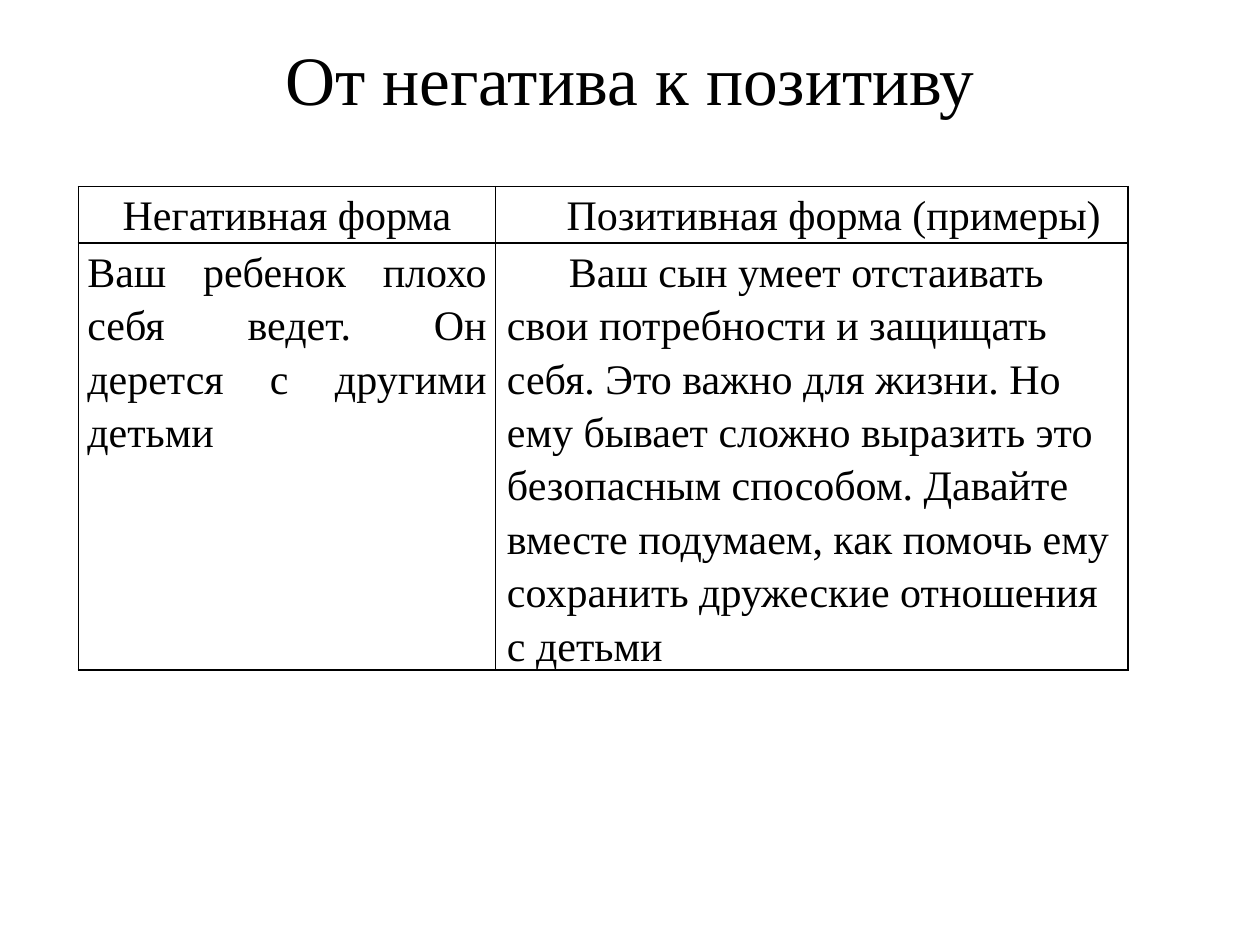
from dataclasses import dataclass

from lxml import etree
from pptx import Presentation
from pptx.dml.color import RGBColor
from pptx.enum.text import MSO_ANCHOR, PP_ALIGN
from pptx.oxml.ns import qn
from pptx.util import Cm, Pt

LEFT, CENTER, JUSTIFY = PP_ALIGN.LEFT, PP_ALIGN.CENTER, PP_ALIGN.JUSTIFY
MIDDLE = MSO_ANCHOR.MIDDLE
TITLE_ONLY = 5
FONT = "Times New Roman"
BLACK = "000000"
COLUMN_WIDTHS = (Cm(8.41), Cm(12.75))
ROW_HEIGHTS = (Cm(1.14), Cm(6.88))


@dataclass
class Phrase:
    text: str
    align: PP_ALIGN = LEFT
    margin: float = 0
    first_line: float = 0


PHRASES = (
    (
        Phrase("Негативная форма", CENTER),
        Phrase("Позитивная форма\u00a0(примеры)", first_line=1.25),
    ),
    (
        Phrase("Ваш ребенок плохо себя ведет. Он дерется с другими детьми", JUSTIFY),
        Phrase(
            "Ваш сын умеет отстаивать свои потребности и защищать себя. "
            "Это важно для жизни. Но ему бывает сложно выразить это безопасным "
            "способом. Давайте вместе подумаем, как помочь ему сохранить "
            "дружеские отношения с детьми",
            margin=0.05,
            first_line=1.25,
        ),
    ),
)


def color(value: str) -> RGBColor:
    return RGBColor.from_string(value)


def add_text(paragraph, text: str, size: float, align: PP_ALIGN) -> None:
    paragraph.alignment = align
    run = paragraph.add_run()
    run.text = text
    run.font.name = FONT
    run.font.size = Pt(size)
    run.font.color.rgb = color(BLACK)


def add_borders(cell) -> None:
    properties = cell._tc.get_or_add_tcPr()
    for position, side in enumerate(("a:lnL", "a:lnR", "a:lnT", "a:lnB")):
        line = etree.Element(qn(side), w=str(Pt(1)))
        fill = etree.SubElement(line, qn("a:solidFill"))
        etree.SubElement(fill, qn("a:srgbClr"), val=BLACK)
        properties.insert(position, line)


def fill_cell(cell, phrase: Phrase) -> None:
    cell.margin_left = cell.margin_right = Cm(0.18)
    cell.margin_top = cell.margin_bottom = 0
    cell.fill.background()
    add_borders(cell)
    paragraph = cell.text_frame.paragraphs[0]
    paragraph.line_spacing = 1.15
    add_text(paragraph, phrase.text, 24, phrase.align)
    properties = paragraph._p.get_or_add_pPr()
    properties.set("marL", str(Cm(phrase.margin)))
    properties.set("indent", str(Cm(phrase.first_line)))


def main() -> None:
    prs = Presentation()
    prs.slide_width, prs.slide_height = Cm(25.4), Cm(19.05)
    slide = prs.slides.add_slide(prs.slide_layouts[TITLE_ONLY])

    # Title
    title = slide.shapes.title
    title.left, title.top = Cm(1.27), Cm(0.76)
    title.width, title.height = Cm(22.86), Cm(1.63)
    title.text_frame.vertical_anchor = MIDDLE
    add_text(title.text_frame.paragraphs[0], "От негатива к позитиву", 39.6, CENTER)

    # Negative and positive wording side by side
    frame = slide.shapes.add_table(
        len(ROW_HEIGHTS), len(COLUMN_WIDTHS), Cm(1.58), Cm(3.76),
        sum(COLUMN_WIDTHS), sum(ROW_HEIGHTS),
    )
    wording = frame.table
    for column, width in zip(wording.columns, COLUMN_WIDTHS):
        column.width = width
    for row, height, phrases in zip(wording.rows, ROW_HEIGHTS, PHRASES):
        row.height = height
        for cell, phrase in zip(row.cells, phrases):
            fill_cell(cell, phrase)
    frame.height = Cm(10.52)

    prs.save("out.pptx")


if __name__ == "__main__":
    main()
